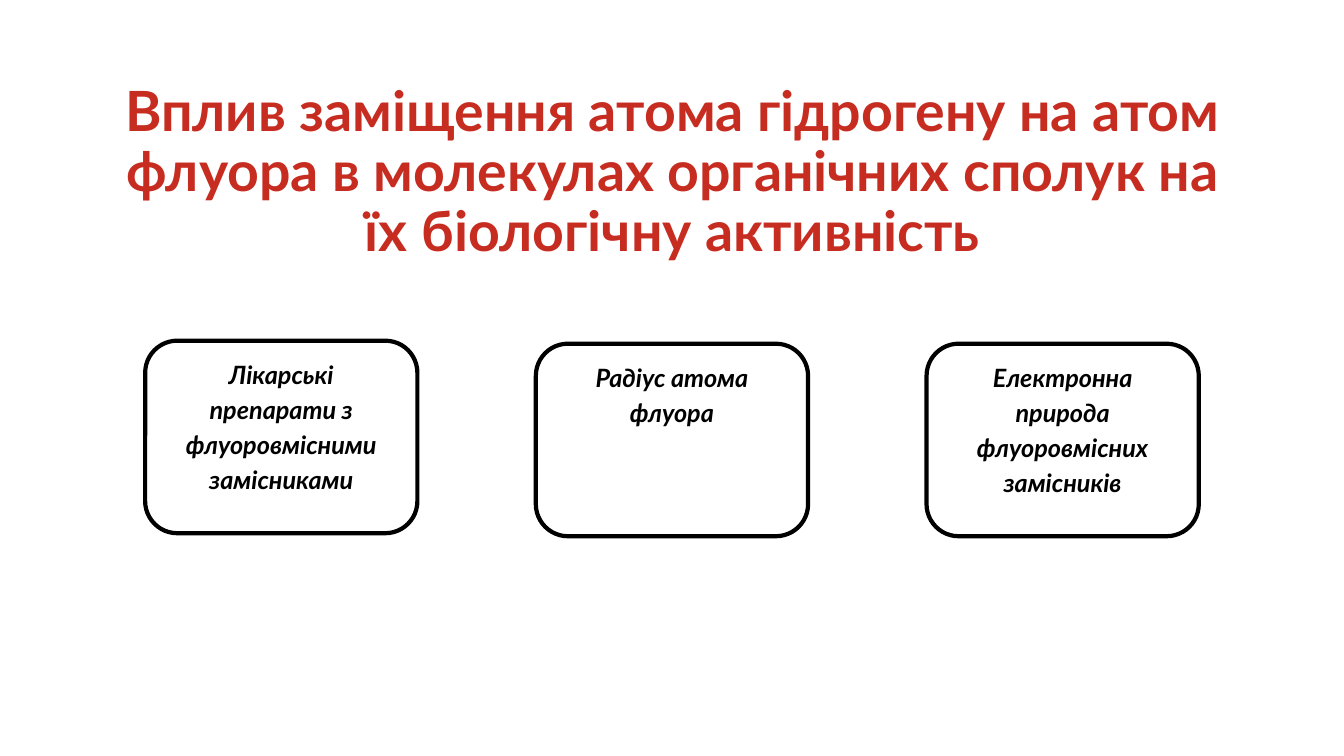
from pptx import Presentation
from pptx.dml.color import RGBColor
from pptx.enum.shapes import MSO_SHAPE
from pptx.enum.text import MSO_ANCHOR, MSO_AUTO_SIZE, PP_ALIGN
from pptx.util import Inches, Pt

ROUND = MSO_SHAPE.ROUNDED_RECTANGLE
TOP, MIDDLE = MSO_ANCHOR.TOP, MSO_ANCHOR.MIDDLE
CENTER = PP_ALIGN.CENTER
NO_FIT = MSO_AUTO_SIZE.NONE

FONT = "Lato"
COLORS = {"title": "C72C21", "ink": "000000", "paper": "FFFFFF"}

TITLE = ("Вплив заміщення атома гідрогену на атом флуора "
         "в молекулах органічних сполук на їх біологічну активність")
# Text and top edge of each card, from left to right
CARDS = [
    ("Лікарські препарати з флуоровмісними замісниками", 3.38),
    ("Радіус атома флуора", 3.41),
    ("Електронна природа флуоровмісних замісників", 3.41),
]
CARD_LEFT, CARD_STEP = 1.44, 3.875
CARD_WIDTH, CARD_HEIGHT = 2.7, 1.91


def color(name):
    return RGBColor.from_string(COLORS[name])


def write(shape, text, size, ink="ink", italic=False, anchor=TOP,
          spacing=1.0, after=0):
    frame = shape.text_frame
    frame.word_wrap = True
    frame.auto_size = NO_FIT
    frame.vertical_anchor = anchor
    frame.text = text
    para = frame.paragraphs[0]
    para.alignment = CENTER
    para.line_spacing = spacing
    para.space_before = Pt(0)
    para.space_after = Pt(after)
    font = para.runs[0].font
    font.name = FONT
    font.size = Pt(size)
    font.bold = True
    font.italic = italic
    font.color.rgb = color(ink)


def add_card(slide, text, left, top):
    card = slide.shapes.add_shape(ROUND, Inches(left), Inches(top),
                                  Inches(CARD_WIDTH), Inches(CARD_HEIGHT))
    card.shadow.inherit = False
    card.fill.solid()
    card.fill.fore_color.rgb = color("paper")
    card.line.color.rgb = color("ink")
    card.line.width = Pt(3)
    write(card, text, 18, italic=True, spacing=1.15, after=10)


def main():
    deck = Presentation()
    deck.slide_width, deck.slide_height = Inches(13.33), Inches(7.5)
    slide = deck.slides.add_slide(deck.slide_layouts[5])

    title = slide.shapes.title
    title.left, title.top = Inches(0.92), Inches(0.83)
    title.width, title.height = Inches(11.5), Inches(1.79)
    write(title, TITLE, 39.6, ink="title", anchor=MIDDLE, spacing=0.9)

    for i, (text, top) in enumerate(CARDS):
        add_card(slide, text, CARD_LEFT + i * CARD_STEP, top)

    deck.save("out.pptx")


if __name__ == "__main__":
    main()
